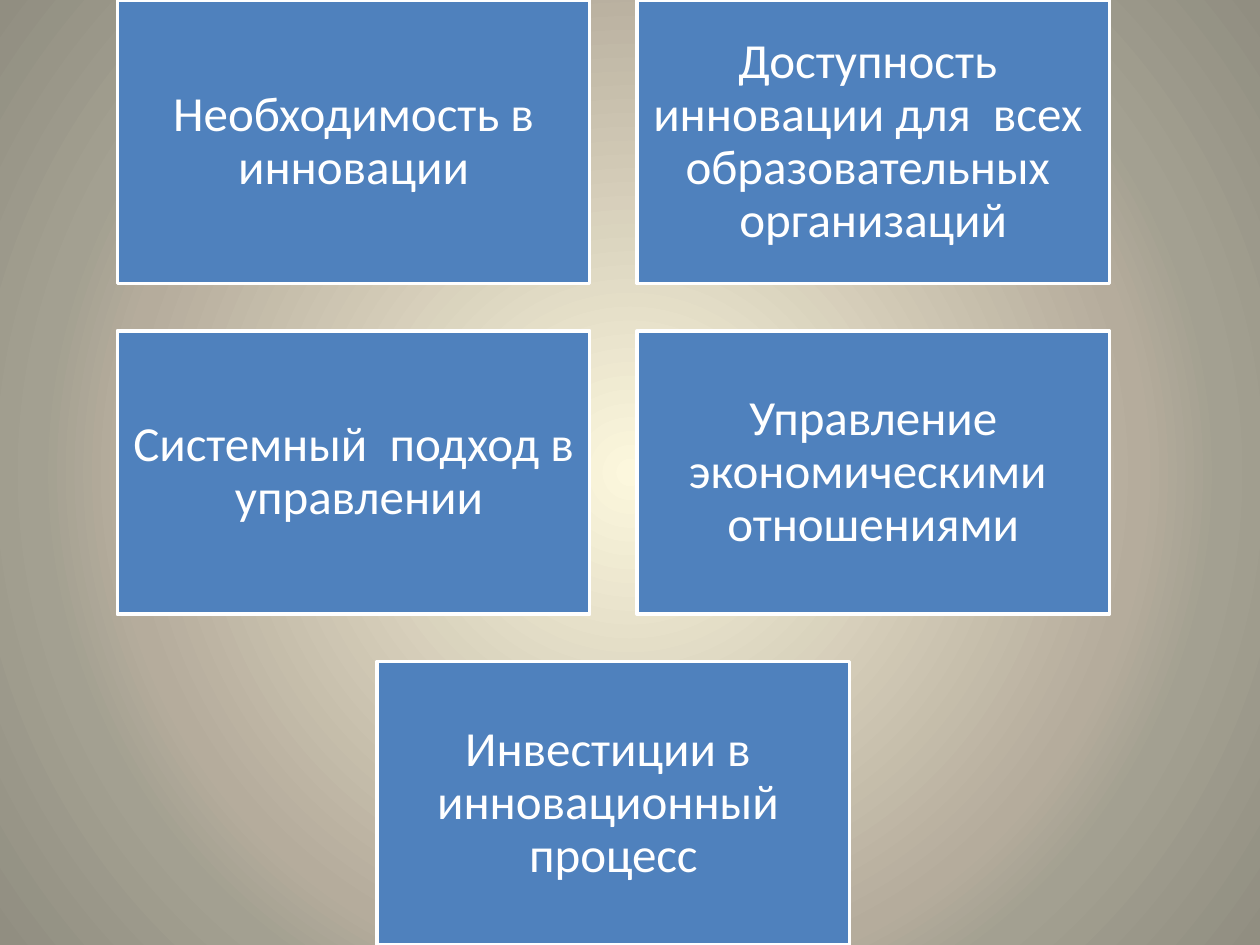
from dataclasses import dataclass

from pptx import Presentation
from pptx.dml.color import RGBColor
from pptx.enum import shapes, text
from pptx.oxml import parse_xml
from pptx.oxml.ns import nsdecls
from pptx.util import Pt

HUES = {
    "box": "4F81BD",
    "white": "FFFFFF",
    "glow": "FCF7DD",
    "sand": "B5AC9C",
    "moss": "A3A091",
    "edge": "918E81",
}
STOPS = [(0, "glow"), (65, "sand"), (75, "moss"), (100, "edge")]
LEFT, WIDTH, HEIGHT, GAP = 67, 270, 162, 27


@dataclass
class Card:
    label: str
    col: float
    row: int


CARDS = [
    Card("Необходимость в инновации", 0, 0),
    Card("Доступность  инновации для  всех  образовательных  организаций", 1, 0),
    Card("Системный  подход в  управлении", 0, 1),
    Card("Управление экономическими  отношениями", 1, 1),
    Card("Инвестиции в  инновационный  процесс", 0.5, 2),
]


def color(name: str) -> RGBColor:
    return RGBColor.from_string(HUES[name])


def paint_back(slide) -> None:
    fill = slide.background.fill
    fill.gradient()
    stops = "".join(
        f'<a:gs pos="{pos * 1000}"><a:srgbClr val="{HUES[name]}"/></a:gs>'
        for pos, name in STOPS
    )
    grad = parse_xml(
        f'<a:gradFill {nsdecls("a")} rotWithShape="1"><a:gsLst>{stops}</a:gsLst>'
        '<a:path path="circle"><a:fillToRect l="50000" t="50000" r="50000" '
        'b="50000"/></a:path></a:gradFill>'
    )
    props = slide.background._cSld.bg.bgPr
    props.replace(props.eg_fillProperties, grad)


def draw_card(slide, card: Card) -> None:
    box = slide.shapes.add_shape(
        shapes.MSO_SHAPE.RECTANGLE,
        Pt(LEFT + card.col * (WIDTH + GAP)),
        Pt(card.row * (HEIGHT + GAP)),
        Pt(WIDTH),
        Pt(HEIGHT),
    )
    box.shadow.inherit = False
    box.fill.solid()
    box.fill.fore_color.rgb = color("box")
    box.line.color.rgb = color("white")
    box.line.width = Pt(2)
    frame = box.text_frame
    frame.word_wrap = True
    frame.vertical_anchor = text.MSO_ANCHOR.MIDDLE
    frame.margin_left = frame.margin_right = Pt(8.4)
    frame.margin_top = frame.margin_bottom = Pt(8.4)
    para = frame.paragraphs[0]
    para.text = card.label
    para.alignment = text.PP_ALIGN.CENTER
    para.line_spacing = 0.9
    para.font.name = "Calibri"
    para.font.size = Pt(28)
    para.font.color.rgb = color("white")


def main() -> None:
    deck = Presentation()
    deck.slide_width, deck.slide_height = Pt(720), Pt(540)
    slide = deck.slides.add_slide(deck.slide_layouts[6])
    paint_back(slide)
    for card in CARDS:
        draw_card(slide, card)
    deck.save("out.pptx")


if __name__ == "__main__":
    main()
